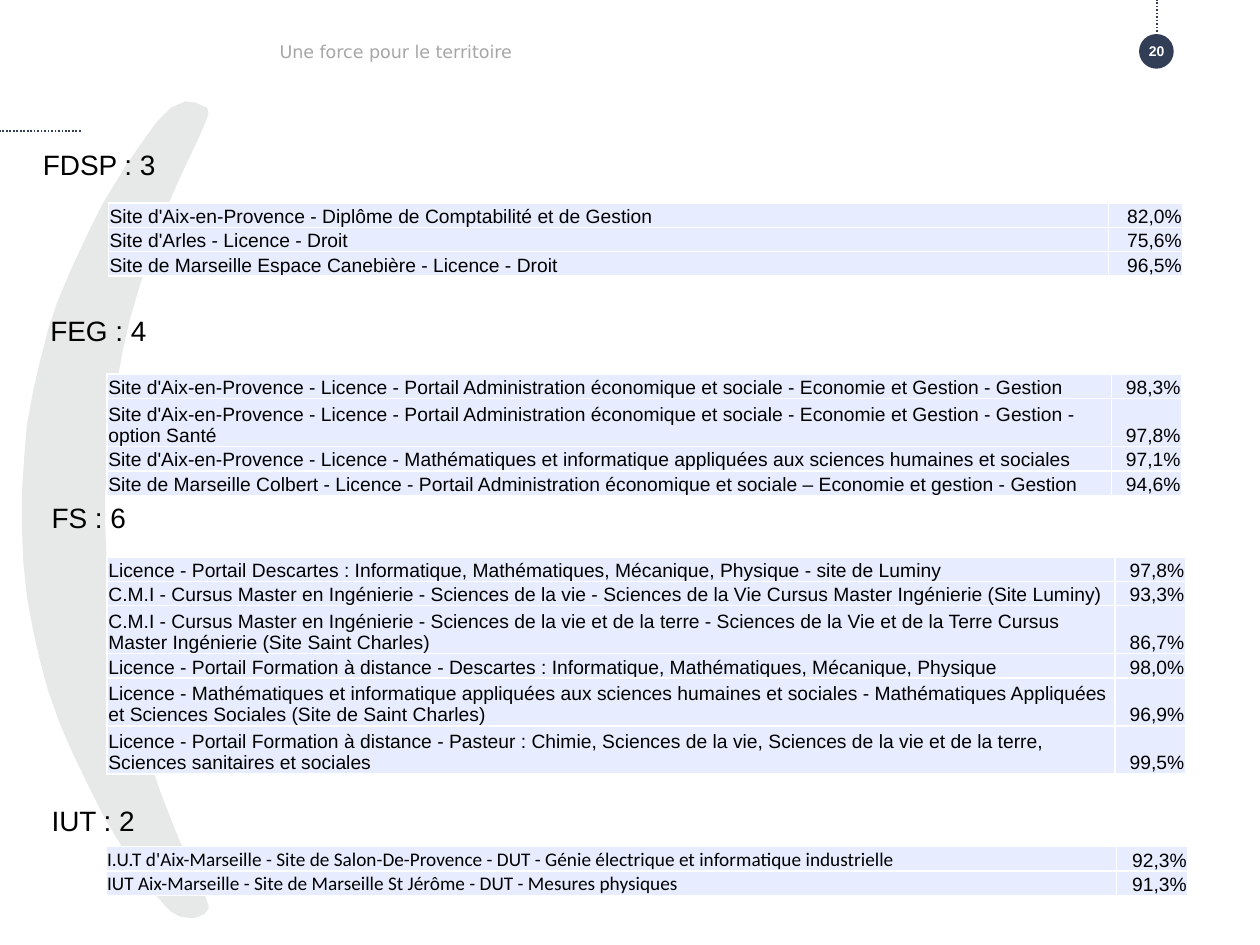
import pptx
import pptx.dml.color
import pptx.enum.dml
import pptx.enum.shapes
import pptx.enum.text
import pptx.oxml
import pptx.oxml.ns
import pptx.util
from lxml import etree

RGB = pptx.dml.color.RGBColor
GREY = RGB(0xE7, 0xE8, 0xE8)
NAVY = RGB(0x31, 0x3E, 0x56)
FOOTER = RGB(0xA6, 0xA6, 0xA6)
PALE = RGB(0xE7, 0xED, 0xFF)
BLACK = RGB(0, 0, 0)
WHITE = RGB(0xFF, 0xFF, 0xFF)
LEFT, CENTER, RIGHT = (pptx.enum.text.PP_ALIGN.LEFT, pptx.enum.text.PP_ALIGN.CENTER,
                       pptx.enum.text.PP_ALIGN.RIGHT)
MIDDLE = pptx.enum.text.MSO_ANCHOR.MIDDLE

prs = pptx.Presentation()
prs.slide_width, prs.slide_height = pptx.util.Inches(10), pptx.util.Inches(7.5)
COL, ROW = prs.slide_width / 100, prs.slide_height / 75
s = prs.slides.add_slide(prs.slide_layouts[6])


def grid(x, y, w, h):
    """Turn columns and rows of the slide grid into lengths."""
    return int(x * COL), int(y * ROW), int(w * COL), int(h * ROW)


def write(tf, text, size, font, color, align=LEFT, bold=False):
    p = tf.paragraphs[0]
    p.alignment = align
    p.font.size, p.font.name, p.font.bold = pptx.util.Pt(size), font, bold
    p.font.color.rgb = color
    p.add_run().text = text


# Crescent in two halves, in tenths of a grid column
UPPER = [(165, 90), (164, 86), (155, 82), (147, 81), (136, 86), (125, 97), (112, 115),
         (99, 134), (82, 162), (69, 188), (57, 214), (46, 240), (39, 261), (32, 288),
         (27, 310), (22, 337), (20, 360), (18, 390), (18, 420), (19, 445), (22, 474),
         (27, 501), (32, 523), (39, 549), (48, 574), (57, 595), (69, 620), (83, 648),
         (83, 393), (85, 363), (87, 334), (91, 311), (97, 278), (103, 252), (111, 225),
         (119, 201), (128, 175), (137, 153), (147, 131), (157, 110), (163, 96)]
LOWER = [(165, 719), (162, 710), (154, 693), (147, 679), (137, 655), (127, 629),
         (119, 606), (110, 580), (102, 551), (95, 520), (90, 492), (87, 470), (84, 441),
         (83, 417), (83, 648), (93, 665), (104, 682), (115, 699), (123, 709), (131, 718),
         (136, 723), (143, 727), (151, 728), (155, 728), (162, 725), (165, 721)]
for points in (UPPER, LOWER):
    builder = s.shapes.build_freeform(*points[0], scale=COL / 10)
    builder.add_line_segments(points[1:], close=True)
    sp = builder.convert_to_shape()
    sp.shadow.inherit = False
    sp.fill.solid()
    sp.fill.fore_color.rgb = sp.line.color.rgb = GREY
    sp.line.width = pptx.util.Pt(0.75)

# Page badge and dotted rules
badge = s.shapes.add_shape(pptx.enum.shapes.MSO_SHAPE.OVAL, *grid(90.4, 2.7, 2.75, 2.75))
badge.shadow.inherit = False
badge.fill.solid()
badge.fill.fore_color.rgb = NAVY
badge.line.fill.background()

for ends in ((91.8, 2.8, 91.8, 0), (6.4, 10.4, 0, 10.4)):
    rule = s.shapes.add_connector(pptx.enum.shapes.MSO_CONNECTOR.STRAIGHT, *grid(*ends))
    rule.line.color.rgb = NAVY
    rule.line.width = pptx.util.Pt(1)
    rule.line.dash_style = pptx.enum.dml.MSO_LINE.ROUND_DOT
    etree.SubElement(rule._element.spPr, pptx.oxml.ns.qn("a:effectLst"))

for area, label in (
    ((21.2, 1.9, 66.2, 4.4), ("Une force pour le territoire", 10, "DejaVu Sans", FOOTER)),
    ((89.3, 3.3, 5, 1.5), ("20", 8, "Arial", WHITE, CENTER, True)),
):
    tf = s.shapes.add_textbox(*grid(*area)).text_frame
    tf.word_wrap = True
    tf.vertical_anchor = MIDDLE
    write(tf, *label)

# Each section: heading, its area, table left and top, column widths, label font, rows
SECTIONS = [
    ("FDSP : 3", (3.4, 11.7, 80.5, 3.1), (8.6, 16.1), (79.4, 5.9), "Arial", [
        ("Site d'Aix-en-Provence - Diplôme de Comptabilité et de Gestion", "82,0%"),
        ("Site d'Arles - Licence - Droit", "75,6%"),
        ("Site de Marseille Espace Canebière - Licence - Droit", "96,5%")]),
    ("FEG : 4", (4, 24.9, 8, 2.7), (8.5, 29.7), (79.7, 5.6), "Arial", [
        ("Site d'Aix-en-Provence - Licence - Portail Administration économique et sociale"
         " - Economie et Gestion - Gestion", "98,3%"),
        ("Site d'Aix-en-Provence - Licence - Portail Administration économique et sociale"
         " - Economie et Gestion - Gestion - option Santé", "97,8%"),
        ("Site d'Aix-en-Provence - Licence - Mathématiques et informatique appliquées"
         " aux sciences humaines et sociales", "97,1%"),
        ("Site de Marseille Colbert - Licence - Portail Administration économique et"
         " sociale – Economie et gestion - Gestion", "94,6%")]),
    ("FS : 6", (4.1, 39.7, 8, 2.7), (8.5, 44.2), (80, 5.6), "Arial", [
        ("Licence - Portail Descartes : Informatique, Mathématiques, Mécanique, Physique"
         " - site de Luminy", "97,8%"),
        ("C.M.I - Cursus Master en Ingénierie - Sciences de la vie - Sciences de la Vie"
         " Cursus Master Ingénierie (Site Luminy)", "93,3%"),
        ("C.M.I - Cursus Master en Ingénierie - Sciences de la vie et de la terre -"
         " Sciences de la Vie et de la Terre Cursus Master Ingénierie"
         " (Site Saint Charles)", "86,7%"),
        ("Licence - Portail Formation à distance - Descartes : Informatique,"
         " Mathématiques, Mécanique, Physique", "98,0%"),
        ("Licence - Mathématiques et informatique appliquées aux sciences humaines et"
         " sociales - Mathématiques Appliquées et Sciences Sociales"
         " (Site de Saint Charles)", "96,9%"),
        ("Licence - Portail Formation à distance - Pasteur : Chimie, Sciences de la vie,"
         " Sciences de la vie et de la terre, Sciences sanitaires et sociales", "99,5%")]),
    ("IUT : 2", (4.1, 63.8, 8, 2.7), (8.4, 67.2), (80.2, 5.7), "Calibri", [
        ("I.U.T d'Aix-Marseille - Site de Salon-De-Provence - DUT - Génie électrique et"
         " informatique industrielle", "92,3%"),
        ("IUT Aix-Marseille - Site de Marseille St Jérôme - DUT - Mesures physiques",
         "91,3%")]),
]
LINE_ROWS = 1.9
LINE_CHARS = 116
BORDER = ('<a:{} xmlns:a="http://schemas.openxmlformats.org/drawingml/2006/main" w="12700">'
          '<a:solidFill><a:srgbClr val="FFFFFF"/></a:solidFill></a:{}>')

for heading, area, corner, widths, label_font, entries in SECTIONS:
    tf = s.shapes.add_textbox(*grid(*area)).text_frame
    tf.margin_left = tf.margin_right = tf.margin_top = tf.margin_bottom = 0
    tf.word_wrap = True
    write(tf, heading, 16, "Arial", BLACK)

    heights = [LINE_ROWS * (2 if len(label) > LINE_CHARS else 1) for label, _ in entries]
    table = s.shapes.add_table(len(entries), 2,
                               *grid(*corner, sum(widths), sum(heights))).table
    table.first_row = table.horz_banding = False
    for column, width in zip(table.columns, widths):
        column.width = int(width * COL)
    for row, height, entry in zip(table.rows, heights, entries):
        row.height = int(height * ROW)
        for cell, text, font, align in zip(row.cells, entry, (label_font, "Arial"),
                                           (LEFT, RIGHT)):
            cell.margin_left = cell.margin_right = cell.margin_top = pptx.util.Inches(0.01)
            cell.margin_bottom = 0
            cell.vertical_anchor = pptx.enum.text.MSO_ANCHOR.BOTTOM
            cell.fill.solid()
            cell.fill.fore_color.rgb = PALE
            for i, side in enumerate(("lnL", "lnR", "lnT", "lnB")):
                cell._tc.tcPr.insert(i, pptx.oxml.parse_xml(BORDER.format(side, side)))
            write(cell.text_frame, text, 11, font, BLACK, align)

prs.save("out.pptx")
